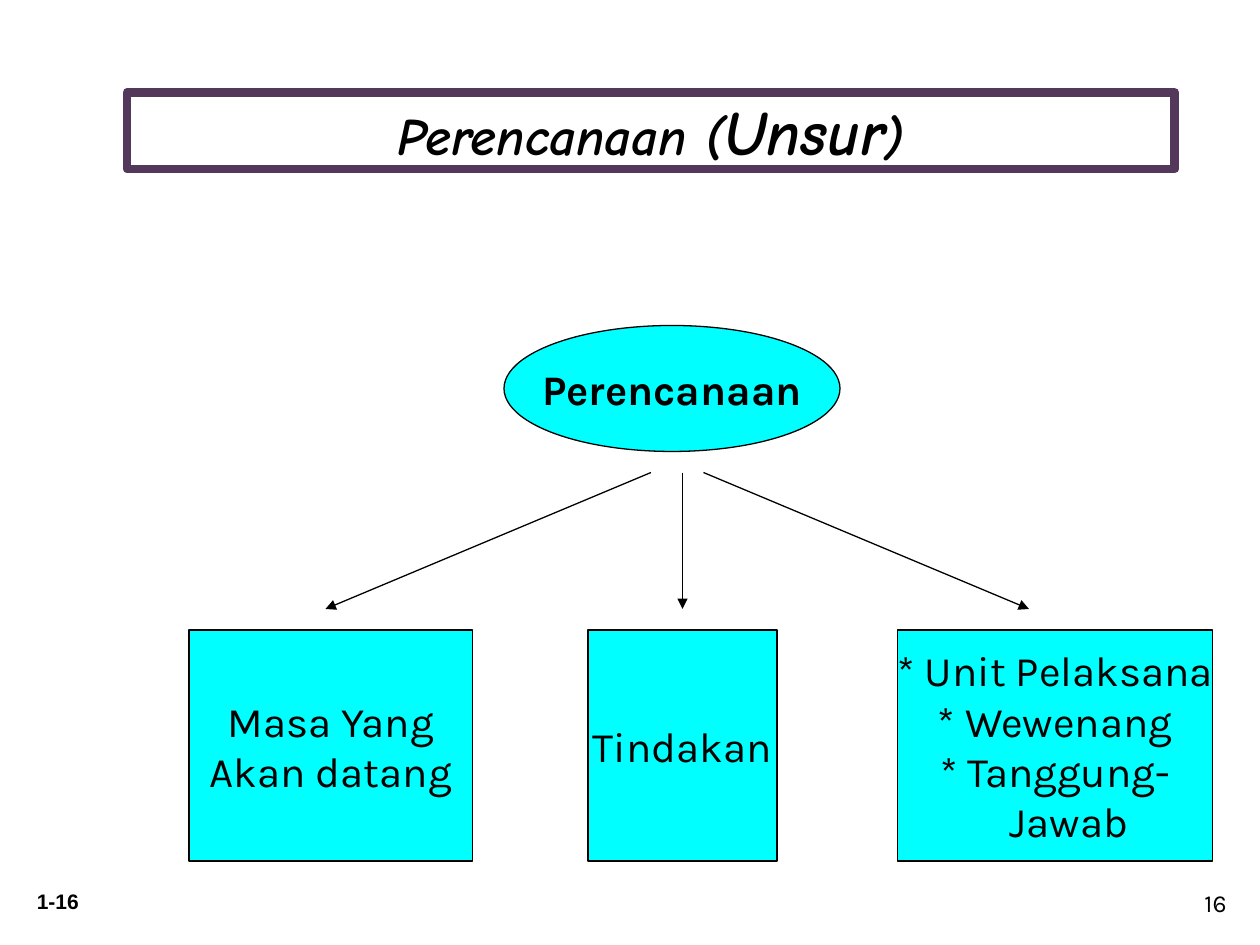
from pptx import Presentation
from pptx.dml.color import RGBColor
from pptx.enum.shapes import MSO_CONNECTOR, MSO_SHAPE
from pptx.enum.text import MSO_ANCHOR, PP_ALIGN
from pptx.oxml.ns import qn
from pptx.util import Inches, Pt
from lxml import etree

BLACK = RGBColor(0x00, 0x00, 0x00)
WHITE = RGBColor(0xFF, 0xFF, 0xFF)
CYAN = RGBColor(0x00, 0xFF, 0xFF)
PLUM = RGBColor(0x54, 0x38, 0x5C)
RECTANGLE, OVAL = MSO_SHAPE.RECTANGLE, MSO_SHAPE.OVAL
STRAIGHT = MSO_CONNECTOR.STRAIGHT
TOP, MIDDLE, BOTTOM = MSO_ANCHOR.TOP, MSO_ANCHOR.MIDDLE, MSO_ANCHOR.BOTTOM
CENTER, RIGHT = PP_ALIGN.CENTER, PP_ALIGN.RIGHT

COLUMNS, ROWS = 120, 90
BOX_TOP, BOX_HEIGHT = 60, 22
ARROW_TOP, ARROW_BOTTOM = 45, 58


class Diagram:
    body_font = "Karla"
    title_font = "Comic Neue"
    footer_font = "Arial"
    thin = 0.75

    def __init__(self, deck):
        self.slide = deck.slides.add_slide(deck.slide_layouts[6])
        self.column = deck.slide_width / COLUMNS
        self.row = deck.slide_height / ROWS

    def place(self, left, top, width, height):
        return (round(left * self.column), round(top * self.row),
                round(width * self.column), round(height * self.row))

    def add_text(self, frame, paragraphs, font, align=CENTER, anchor=MIDDLE,
                 wrap=True, bold=False, italic=False):
        frame.word_wrap = wrap
        frame.vertical_anchor = anchor
        for index, runs in enumerate(paragraphs):
            paragraph = frame.add_paragraph() if index else frame.paragraphs[0]
            paragraph.alignment = align
            for text, size in runs:
                run = paragraph.add_run()
                run.text = text
                run.font.name = font
                run.font.size = Pt(size)
                run.font.bold = bold
                run.font.italic = italic
                run.font.color.rgb = BLACK

    def outline(self, kind, area, fill, line, weight):
        shape = self.slide.shapes.add_shape(kind, *self.place(*area))
        shape.shadow.inherit = False
        shape.fill.solid()
        shape.fill.fore_color.rgb = fill
        shape.line.color.rgb = line
        shape.line.width = Pt(weight)
        return shape.text_frame

    def title(self, area, runs):
        frame = self.outline(RECTANGLE, area, WHITE, PLUM, 5)
        self.add_text(frame, [runs], self.title_font, bold=True, italic=True)

    def node(self, kind, area, lines, bold=False):
        frame = self.outline(kind, area, CYAN, BLACK, self.thin)
        self.add_text(frame, [[(line, 24)] for line in lines], self.body_font,
                      wrap=False, bold=bold)
        return frame

    def label(self, area, text, size, font, **style):
        box = self.slide.shapes.add_textbox(*self.place(*area))
        self.add_text(box.text_frame, [[(text, size)]], font, **style)

    def arrow(self, start, end):
        x1, y1, x2, y2 = self.place(start, ARROW_TOP, end, ARROW_BOTTOM)
        arrow = self.slide.shapes.add_connector(STRAIGHT, x1, y1, x2, y2)
        arrow.line.color.rgb = BLACK
        arrow.line.width = Pt(self.thin)
        properties = arrow._element.spPr
        etree.SubElement(properties.find(qn("a:ln")), qn("a:tailEnd"), type="triangle")
        etree.SubElement(properties, qn("a:effectLst"))


def main():
    deck = Presentation()
    deck.slide_width, deck.slide_height = Inches(10), Inches(7.5)
    diagram = Diagram(deck)

    diagram.label((1, 84, 9, 3.6), "1-16", 12, diagram.footer_font, anchor=TOP, bold=True)
    diagram.label((93, 82, 25, 6), "16", 14, diagram.body_font, align=RIGHT, anchor=BOTTOM)
    diagram.title((12.1, 8.8, 99.8, 7.3),
                  [("Perencanaan (", 30), ("Unsur", 36), (")", 30)])
    diagram.node(OVAL, (48, 31, 32, 12), ["Perencanaan"], bold=True)

    elements = [
        (18, 27, ["Masa Yang", "Akan datang"]),
        (56, 18, ["Tindakan"]),
        (85.5, 30, ["* Unit Pelaksana", "* Wewenang", "* Tanggung-", "Jawab"]),
    ]
    for left, width, lines in elements:
        frame = diagram.node(RECTANGLE, (left, BOX_TOP, width, BOX_HEIGHT), lines)
    continuation = frame.paragraphs[-1]
    continuation._p.get_or_add_pPr().set("marL", str(Inches(0.22)))

    for start, end in [(62, 31), (65, 65), (67, 98)]:
        diagram.arrow(start, end)

    deck.save("out.pptx")


if __name__ == "__main__":
    main()
